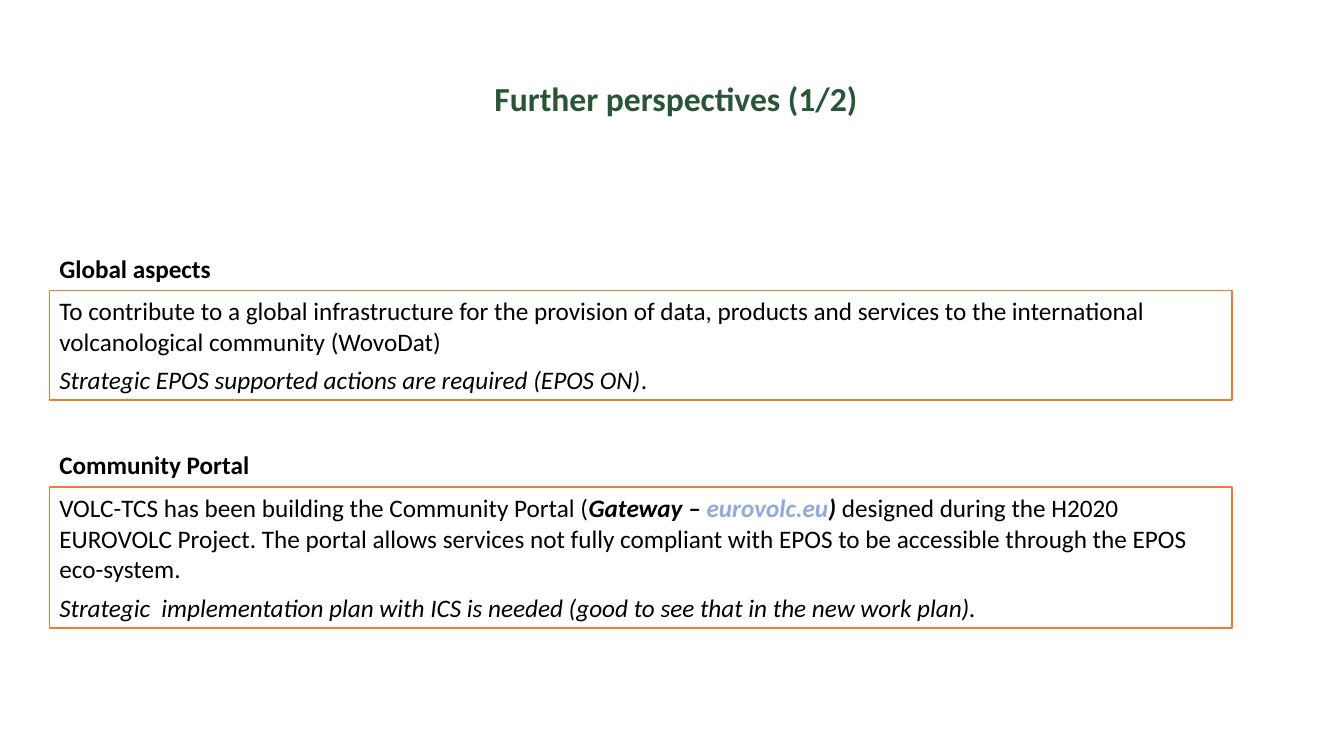
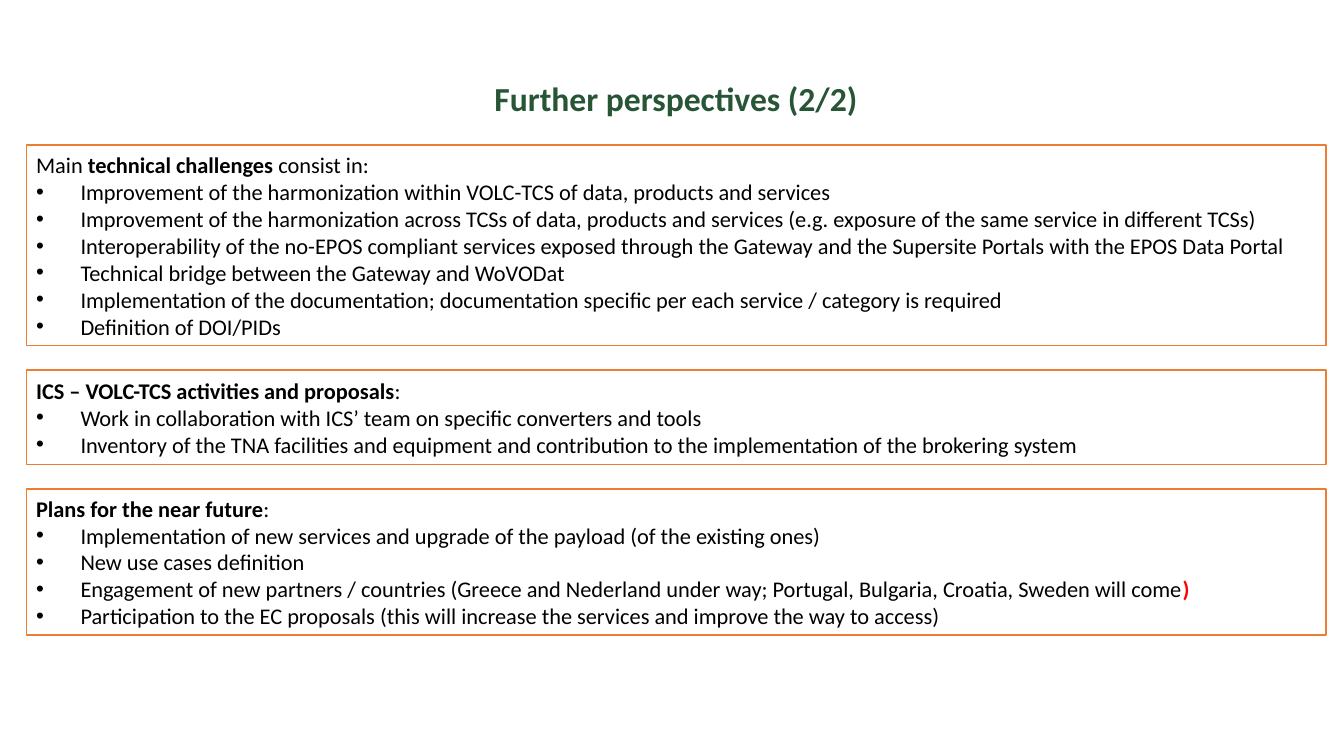
from lxml.etree import SubElement
from pptx import Presentation
from pptx.dml.color import RGBColor
from pptx.enum.shapes import MSO_SHAPE
from pptx.enum.text import MSO_ANCHOR, MSO_AUTO_SIZE, PP_ALIGN
from pptx.oxml.ns import qn
from pptx.util import Inches, Pt

# Shared style
FONT = "Calibri"
BLACK, WHITE, GREEN = "000000", "FFFFFF", "275536"
ORANGE, LINK_BLUE, RED = "ED7D31", "8FAADC", "FF0000"
WIDE_LEFT, WIDE_WIDTH = 0.26, 12.89
SECTION_LEFT, SECTION_WIDTH = 0.49, 11.73
HEADING_OFFSET = 0.42
LIST_TOP, LIST_GAP = 1.44, 0.24
BULLET_INDENT = 0.44

# Slide content: a paragraph is a list of (text, format) runs
BOLD, ITALIC = {"bold": True}, {"italic": True}
SECTIONS = [
    ("Global aspects", 2.88, 1.09, [
        [("To contribute to a global infrastructure for the provision of data, products and "
          "services to the international volcanological community (WovoDat)", {})],
        [("Strategic EPOS supported actions are required (EPOS ON)", ITALIC), (".", {})],
    ]),
    ("Community Portal", 4.83, 1.4, [
        [("VOLC-TCS has been building the Community Portal (", {}),
         ("Gateway – ", BOLD | ITALIC),
         ("eurovolc.eu", BOLD | ITALIC | {"color": LINK_BLUE}),
         (")", BOLD | ITALIC),
         (" designed during the H2020 EUROVOLC Project. The portal allows services not fully "
          "compliant with EPOS to be accessible through the EPOS eco-system.", {})],
        [("Strategic  implementation plan with ICS is needed "
          "(good to see that in the new work plan).", ITALIC)],
    ]),
]
LISTS = [
    (1.99, [("Main ", {}), ("technical challenges ", BOLD), ("consist in:", {})], [
        [("Improvement of the harmonization within VOLC-TCS of data, products and services", {})],
        [("Improvement of the harmonization across TCSs of data, products and services "
          "(e.g. exposure of the same service in different TCSs)", {})],
        [("Interoperability of the no-EPOS compliant services exposed through the Gateway "
          "and the Supersite Portals with the EPOS Data Portal", {})],
        [("Technical bridge between the Gateway and WoVODat", {})],
        [("Implementation of the documentation; documentation specific per each service / "
          "category is required", {})],
        [("Definition of DOI/PIDs", {})],
    ]),
    (0.94, [("ICS – VOLC-TCS activities and proposals", BOLD), (":", {})], [
        [("Work in collaboration with ICS’ team on specific converters and tools", {})],
        [("Inventory of the TNA facilities and equipment and contribution to the "
          "implementation of the brokering system", {})],
    ]),
    (1.45, [("Plans for the near future", BOLD), (":", {})], [
        [("Implementation of new services and upgrade of the payload "
          "(of the existing ones)", {})],
        [("New use cases definition", {})],
        [("Engagement of new partners / countries (Greece and Nederland under way; "
          "Portugal, Bulgaria, Croatia, Sweden will come", {}),
         (")", BOLD | {"color": RED})],
        [("Participation to the EC proposals (this will increase the services and improve "
          "the way to access)", {})],
    ]),
]


def rgb(value):
    return RGBColor.from_string(value)


def add_run(paragraph, text, size=18, color=BLACK, bold=False, italic=False):
    run = paragraph.add_run()
    run.text = text
    font = run.font
    font.name, font.size = FONT, Pt(size)
    font.bold, font.italic = bold, italic
    font.color.rgb = rgb(color)


def add_bullet(paragraph):
    properties = paragraph._p.get_or_add_pPr()
    properties.set("marL", str(Inches(BULLET_INDENT)))
    properties.set("indent", str(-Inches(BULLET_INDENT)))
    SubElement(properties, qn("a:buFont")).set("typeface", "Arial")
    SubElement(properties, qn("a:buChar")).set("char", "•")


def write_paragraphs(shape, paragraphs, size=18, align=PP_ALIGN.LEFT, gap=0,
                     bullets=False):
    """Fill a shape with runs; bullets apply to every paragraph after the first."""
    frame = shape.text_frame
    frame.word_wrap = True
    frame.auto_size = MSO_AUTO_SIZE.SHAPE_TO_FIT_TEXT
    for index, runs in enumerate(paragraphs):
        paragraph = frame.add_paragraph() if index else frame.paragraphs[0]
        paragraph.alignment = align
        if index and gap:
            paragraph.space_before = Pt(gap)
        if index and bullets:
            add_bullet(paragraph)
        for text, run_format in runs:
            add_run(paragraph, text, size=size, **run_format)


def add_label(slide, text, left, top, width, height, size=18, color=BLACK,
              align=PP_ALIGN.LEFT):
    label = slide.shapes.add_textbox(*map(Inches, (left, top, width, height)))
    write_paragraphs(label, [[(text, BOLD | {"color": color})]], size=size, align=align)


def add_framed_box(slide, paragraphs, left, top, width, height, **text_format):
    box = slide.shapes.add_shape(MSO_SHAPE.RECTANGLE,
                                 *map(Inches, (left, top, width, height)))
    box.shadow.inherit = False
    box.fill.solid()
    box.fill.fore_color.rgb = rgb(WHITE)
    box.line.color.rgb = rgb(ORANGE)
    box.line.width = Pt(1)
    box.text_frame.vertical_anchor = MSO_ANCHOR.MIDDLE
    write_paragraphs(box, paragraphs, **text_format)


def add_titled_slide(presentation, title):
    slide = presentation.slides.add_slide(presentation.slide_layouts[6])
    add_label(slide, title, WIDE_LEFT, 0.72, WIDE_WIDTH, 0.5,
              size=24, color=GREEN, align=PP_ALIGN.CENTER)
    return slide


def main():
    presentation = Presentation()
    presentation.slide_width, presentation.slide_height = Inches(13.33), Inches(7.5)

    # Headed sections
    slide = add_titled_slide(presentation, "Further perspectives (1/2)")
    for heading, top, height, paragraphs in SECTIONS:
        add_label(slide, heading, SECTION_LEFT, top - HEADING_OFFSET, 3.13, 0.4)
        add_framed_box(slide, paragraphs, SECTION_LEFT, top, SECTION_WIDTH, height, gap=6)

    # Stacked bullet lists
    slide = add_titled_slide(presentation, "Further perspectives (2/2)")
    top = LIST_TOP
    for height, heading, items in LISTS:
        add_framed_box(slide, [heading, *items], WIDE_LEFT, top, WIDE_WIDTH, height,
                       size=16, bullets=True)
        top += height + LIST_GAP

    presentation.save("out.pptx")


if __name__ == "__main__":
    main()
